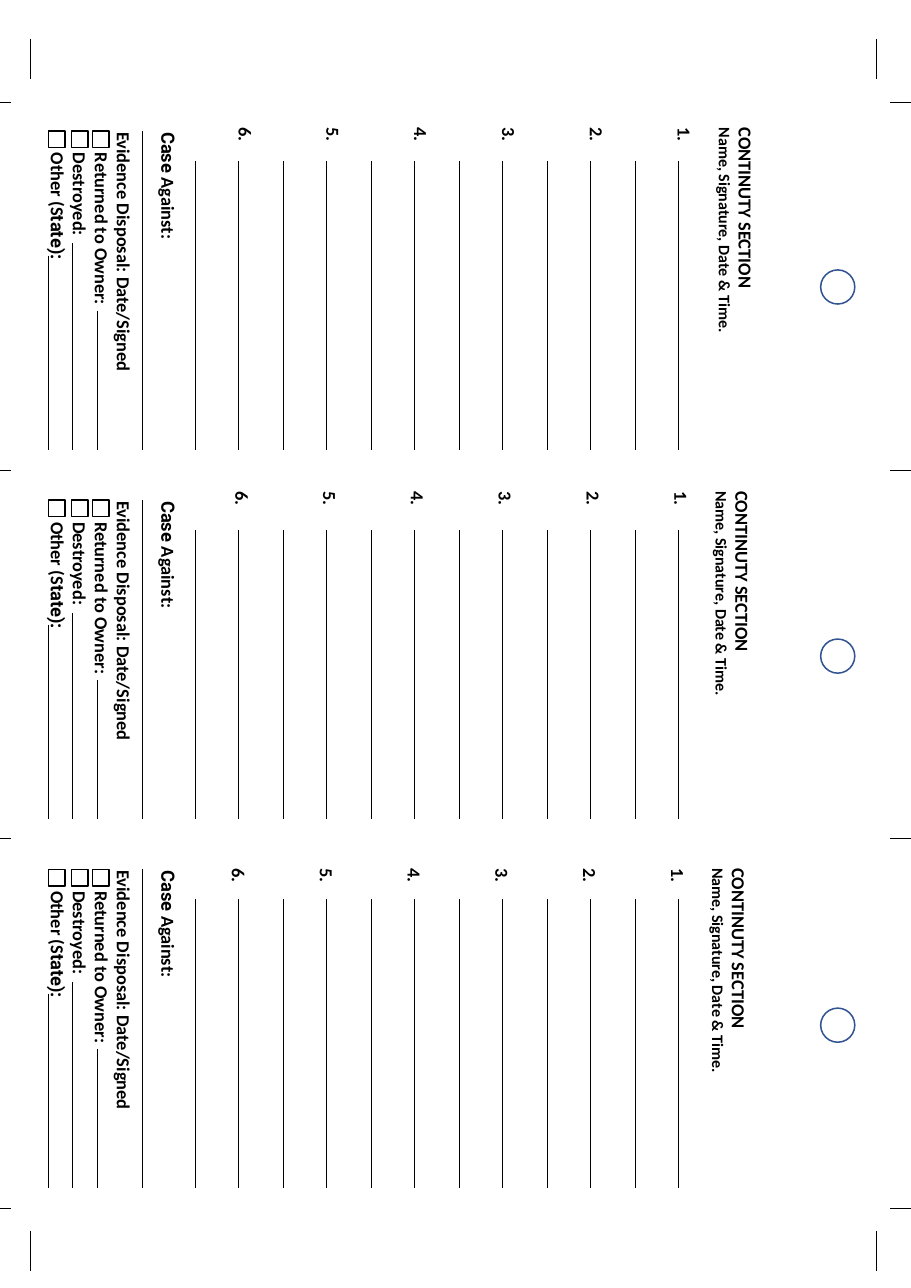
from itertools import product
from lxml.etree import SubElement
from pptx import Presentation
from pptx.dml.color import RGBColor
from pptx.enum.shapes import MSO_CONNECTOR, MSO_SHAPE
from pptx.oxml.ns import qn
from pptx.util import Inches, Pt

BLACK, WHITE, BLUE = "000000", "FFFFFF", "325491"
CARD_TOP, CARD_PITCH, CARD_HEIGHT = 1.19, 3.35, 2.89


def color(value):
    """Turn a hex string into a colour."""
    return RGBColor.from_string(value)


def add_line(shapes, x1, y1, x2, y2):
    """Draw a thin black rule between two points."""
    line = shapes.add_connector(MSO_CONNECTOR.STRAIGHT, Inches(x1), Inches(y1), Inches(x2), Inches(y2))
    line.line.color.rgb = color(BLACK)
    line.line.width = Pt(0.5)
    SubElement(line._element.spPr, qn("a:effectLst"))


def add_outline(shapes, kind, left, top, size, line_color):
    """Draw a white shape with a coloured outline."""
    sp = shapes.add_shape(kind, Inches(left), Inches(top), Inches(size), Inches(size))
    sp.shadow.inherit = False
    sp.fill.solid()
    sp.fill.fore_color.rgb = color(WHITE)
    sp.line.color.rgb = color(line_color)
    sp.line.width = Pt(1)


def add_sideways_text(shapes, left, top, width, height, rows):
    """Fill a box, placed as it looks after a quarter turn, with (runs, size, gap, indent) rows."""
    x = left + (width - height) / 2
    y = top + (height - width) / 2
    sp = shapes.add_textbox(Inches(x), Inches(y), Inches(height), Inches(width))
    sp.rotation = 90
    tf = sp.text_frame
    tf.word_wrap = True
    for i, (runs, size, gap, indent) in enumerate(rows):
        p = tf.paragraphs[0] if i == 0 else tf.add_paragraph()
        if indent:
            p._p.get_or_add_pPr().set("marL", str(Inches(indent)))
        if gap:
            p.space_before = Pt(gap)
        p.font.size = Pt(size)
        p.font.bold = True
        p.font.color.rgb = color(BLACK)
        for text, font in runs:
            r = p.add_run()
            r.text = text
            r.font.name = font


def add_disposal(shapes, top):
    """Place the case and evidence disposal part of a card."""
    rows = [
        ([("Case ", "Roboto"), ("Against:", "Calibri")], 12, 0, 0),
        ([("Evidence Disposal: Date/Signed", "Calibri")], 12, 14.65, 0),
        ([("Returned to Owner:", "Calibri")], 12, 0, 0.19),
        ([("Destroyed:", "Calibri")], 12, 0, 0.19),
        ([("Other (S", "Calibri"), ("tate):", "Roboto")], 12, 0, 0.19),
    ]
    add_sideways_text(shapes, 0.37, top - 0.09, 1.31, 2.9, rows)
    for x in (0.84, 0.65, 0.44):
        add_outline(shapes, MSO_SHAPE.RECTANGLE, x, top, 0.15, BLACK)
    for x, start in ((1.29, 0), (0.88, 1.63), (0.66, 1.02), (0.44, 1.13)):
        add_line(shapes, x, top + start, x, top + CARD_HEIGHT)


def add_continuity(shapes, top, text_left, text_top):
    """Place the six numbered signature entries of a card."""
    rows = [
        ([("CONTINUTY SECTION", "Calibri")], 12, 0, 0),
        ([("Name, Signature, Date & Time.", "Calibri")], 10.5, 0, 0),
    ]
    for number in range(1, 7):
        gap = 12.8 if number == 1 else 43
        rows.append(([(f"{number}.", "Calibri")], 12, gap, 0))
    add_sideways_text(shapes, text_left, text_top, 5.3, 2.69, rows)
    for entry, offset in product(range(6), (0, 0.39)):
        x = 1.77 + 0.8 * entry + offset
        add_line(shapes, x, top + 0.27, x, top + CARD_HEIGHT)


def add_card(slide, top, text_left, text_top):
    """Place one evidence tag with its punch hole."""
    shapes = slide.shapes.add_group_shape().shapes
    add_disposal(shapes, top)
    add_continuity(shapes, top, text_left, text_top)
    add_outline(shapes, MSO_SHAPE.OVAL, 7.45, top + 1.26, 0.31, BLUE)


def add_crop_marks(slide):
    """Draw the cutting marks along the page edges."""
    for x, y in product((0.28, 7.96), (0.35, 11.17)):
        add_line(slide.shapes, x, y, x, y + 0.37)
    for y, (x1, x2) in product((0.93, 4.27, 7.61, 10.97), ((0, 0.1), (8.08, 8.27))):
        add_line(slide.shapes, x1, y, x2, y)


def main():
    """Build the sheet of three evidence tags."""
    prs = Presentation()
    prs.slide_width, prs.slide_height = Inches(8.27), Inches(11.69)
    slide = prs.slides.add_slide(prs.slide_layouts[6])
    for i, text_top in enumerate((1.06, 4.36, 7.78)):
        add_card(slide, CARD_TOP + i * CARD_PITCH, 1.62 - 0.03 * i, text_top)
    add_crop_marks(slide)
    prs.save("out.pptx")


if __name__ == "__main__":
    main()
